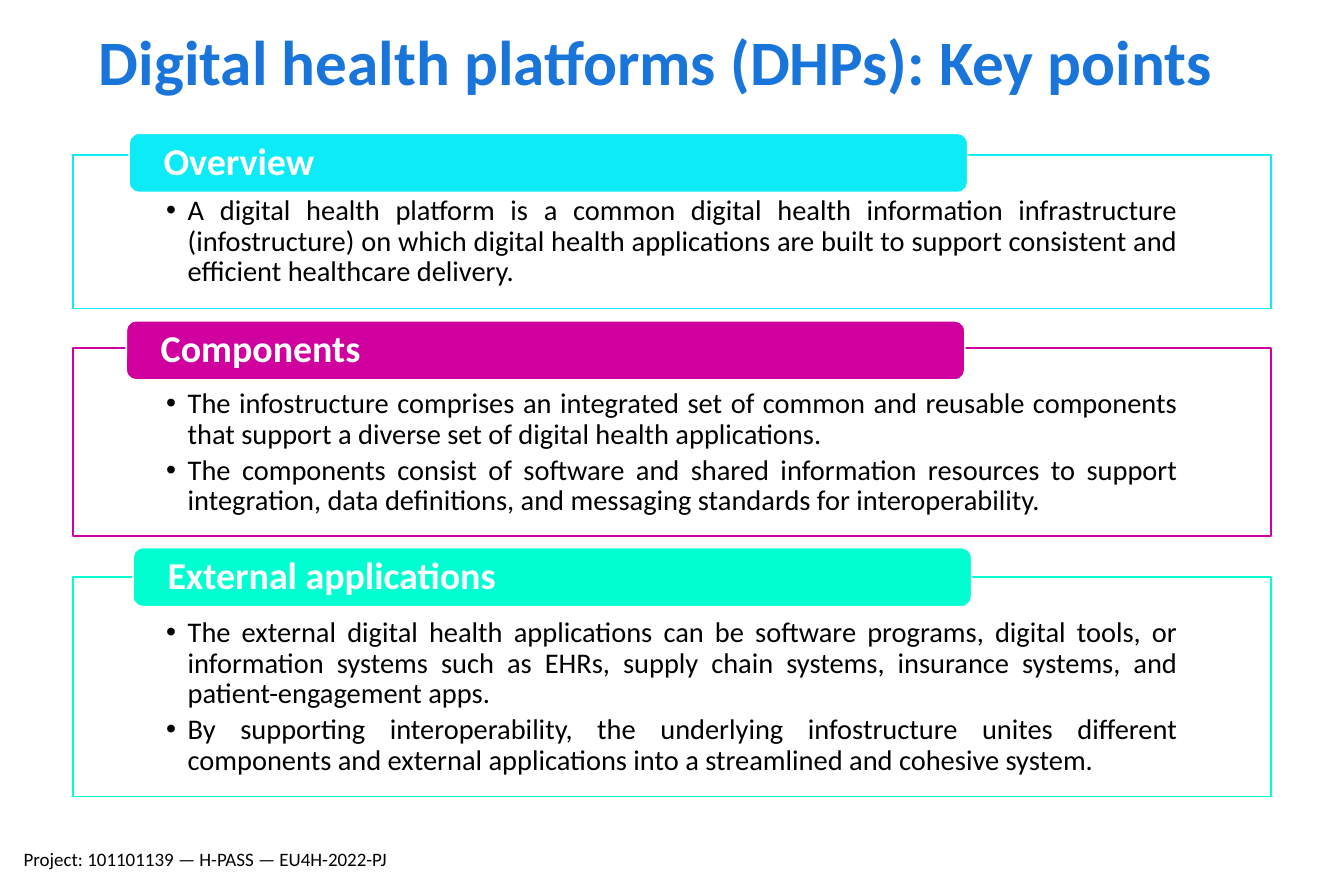
from dataclasses import dataclass

from lxml.etree import SubElement
from pptx import Presentation
from pptx.dml.color import RGBColor
from pptx.enum.shapes import MSO_SHAPE as Shape
from pptx.enum.text import MSO_ANCHOR as Anchor, MSO_AUTO_SIZE as AutoSize, PP_ALIGN as Align
from pptx.oxml.ns import qn
from pptx.shapes.autoshape import Shape as AutoShape
from pptx.slide import Slide
from pptx.text.text import TextFrame, _Paragraph as Paragraph
from pptx.util import Pt

BLUE = RGBColor(0x1A, 0x75, 0xDB)
CYAN = RGBColor(0x0C, 0xEB, 0xF6)
MAGENTA = RGBColor(0xD0, 0x00, 0x9E)
MINT = RGBColor(0x02, 0xFF, 0xD2)
WHITE = RGBColor(0xFF, 0xFF, 0xFF)
BLACK = RGBColor(0, 0, 0)

PANEL_LEFT, PANEL_WIDTH = 46.1, 758.2
TAB_WIDTH, TAB_HEIGHT = 530.6, 37.4
BULLET_INDENT = 13.7


@dataclass(frozen=True)
class Section:
    heading: str
    color: RGBColor
    panel_top: float
    panel_height: float
    tab_left: float
    tab_top: float
    points: tuple[str, ...]


SECTIONS = (
    Section("Overview", CYAN, 97.9, 97.2, 81.7, 84.4, (
        "A digital health platform is a common digital health information infrastructure "
        "(infostructure) on which digital health applications are built to support "
        "consistent and efficient healthcare delivery.",
    )),
    Section("Components", MAGENTA, 220.3, 118.8, 79.9, 203, (
        "The infostructure comprises an integrated set of common and reusable components "
        "that support a diverse set of digital health applications.",
        "The components consist of software and shared information resources to support "
        "integration, data definitions, and messaging standards for interoperability.",
    )),
    Section("External applications", MINT, 365, 139, 84.2, 346.5, (
        "The external digital health applications can be software programs, digital tools, "
        "or information systems such as EHRs, supply chain systems, insurance systems, and "
        "patient-engagement apps.",
        "By supporting interoperability, the underlying infostructure unites different "
        "components and external applications into a streamlined and cohesive system.",
    )),
)


def set_font(para: Paragraph, size: float, color: RGBColor, bold: bool = False) -> None:
    font = para.font
    font.name, font.size, font.bold = "Calibri", Pt(size), bold
    font.color.rgb = color


def set_margins(frame: TextFrame, left: float, top: float, right: float, bottom: float) -> None:
    frame.margin_left, frame.margin_top = Pt(left), Pt(top)
    frame.margin_right, frame.margin_bottom = Pt(right), Pt(bottom)


def add_box(page: Slide, kind: Shape, left: float, top: float, width: float, height: float,
            line: RGBColor) -> AutoShape:
    box = page.shapes.add_shape(kind, Pt(left), Pt(top), Pt(width), Pt(height))
    box.shadow.inherit = False
    box.line.color.rgb = line
    box.line.width = Pt(1)
    box.text_frame.word_wrap = True
    return box


def add_bullet(para: Paragraph) -> None:
    properties = para._p.get_or_add_pPr()
    properties.set("marL", str(Pt(BULLET_INDENT)))
    properties.set("indent", str(-Pt(BULLET_INDENT)))
    SubElement(properties, qn("a:buFont"), typeface="Arial")
    SubElement(properties, qn("a:buChar"), char="•")


def add_panel(page: Slide, section: Section) -> None:
    panel = add_box(page, Shape.RECTANGLE, PANEL_LEFT, section.panel_top,
                    PANEL_WIDTH, section.panel_height, section.color)
    panel.fill.background()
    frame = panel.text_frame
    frame.vertical_anchor = Anchor.TOP
    set_margins(frame, 59, 26, 59, 10)
    for index, point in enumerate(section.points):
        para = frame.add_paragraph() if index else frame.paragraphs[0]
        para.text = point
        para.level = 1
        para.alignment = Align.JUSTIFY
        para.line_spacing = 0.9
        para.space_after = Pt(3)
        add_bullet(para)
        set_font(para, 18, BLACK)


def add_tab(page: Slide, section: Section) -> None:
    tab = add_box(page, Shape.ROUNDED_RECTANGLE, section.tab_left, section.tab_top,
                  TAB_WIDTH, TAB_HEIGHT, WHITE)
    tab.fill.solid()
    tab.fill.fore_color.rgb = section.color
    frame = tab.text_frame
    frame.vertical_anchor = Anchor.MIDDLE
    set_margins(frame, 20, 0, 20, 0)
    para = frame.paragraphs[0]
    para.text = section.heading
    para.alignment = Align.LEFT
    para.line_spacing = 0.9
    set_font(para, 24, WHITE, bold=True)


def add_title(page: Slide) -> None:
    title = page.shapes.title
    title.left, title.top, title.width, title.height = Pt(55.4), Pt(15.8), Pt(758.2), Pt(100)
    frame = title.text_frame
    frame.word_wrap = True
    frame.auto_size = AutoSize.NONE
    frame.vertical_anchor = Anchor.TOP
    para = frame.paragraphs[0]
    para.text = "Digital health platforms (DHPs): Key points"
    para.alignment = Align.JUSTIFY
    para.line_spacing = 0.9
    set_font(para, 40, BLUE, bold=True)


def add_footer(page: Slide) -> None:
    footer = page.shapes.add_textbox(Pt(7.9), Pt(532.8), Pt(261.4), Pt(19.4))
    footer.text_frame.word_wrap = True
    para = footer.text_frame.paragraphs[0]
    para.text = "Project: 101101139 — H-PASS — EU4H-2022-PJ"
    set_font(para, 12, BLACK)


def main() -> None:
    deck = Presentation()
    deck.slide_width, deck.slide_height = Pt(850.4), Pt(566.9)
    page = deck.slides.add_slide(deck.slide_layouts.get_by_name("Title Only"))
    add_title(page)
    for section in SECTIONS:
        add_panel(page, section)
        add_tab(page, section)
    add_footer(page)
    deck.save("out.pptx")


if __name__ == "__main__":
    main()
